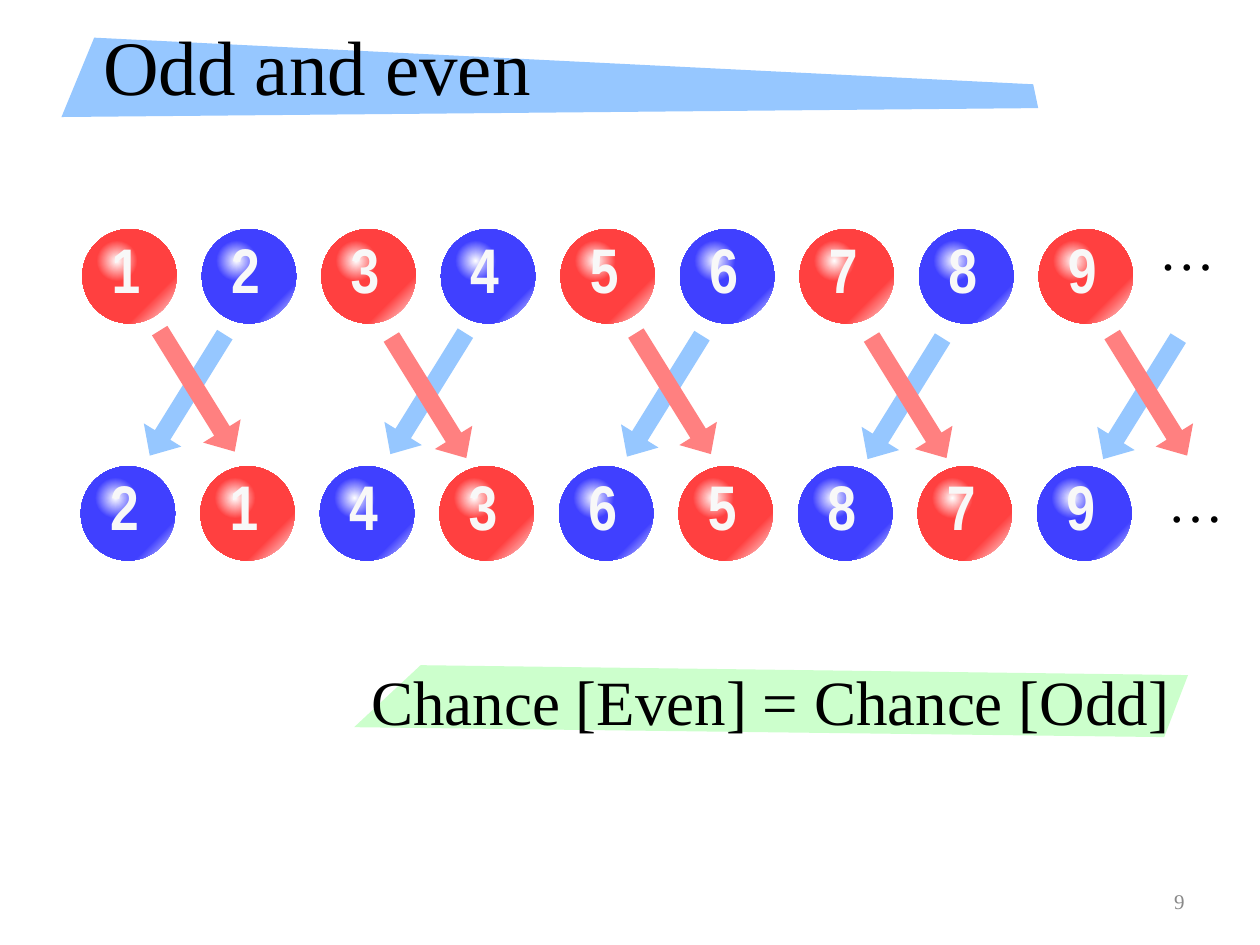
from pptx import Presentation
from pptx import util as u
from pptx.dml.color import RGBColor
from pptx.enum import shapes, text
from pptx.oxml import parse_xml
from pptx.oxml.ns import nsdecls

COLORS = {
    "red": "FF4040", "blue": "4040FF", "white": "FFFFFF", "digit": "F8F8F8",
    "red_arrow": "FF8080", "blue_arrow": "96C7FF", "title_band": "96C7FF",
    "answer_band": "CCFFCC", "ink": "000000", "page": "898989",
}
SERIF, NARROW = "Times New Roman", "Arial Narrow"

ROWS = [
    {"top": 4.62, "left": 1.66, "numbers": "123456789", "colors": ("red", "blue")},
    {"top": 9.4, "left": 1.63, "numbers": "214365879", "colors": ("blue", "red")},
]
LAST_LOWER = "9"
PITCH, BALL, SHINE = 2.41, 1.9, 0.92
SHINE_SHIFT = (0.24, 0.18)
DIGIT_SHIFT = (0.34, -0.1)
RIM_STOP = {"red": 74, "blue": 78}

ARROW_SIZE = (2.87, 0.89)
ARROWS = [
    ("blue_arrow", 121.8,
     [(2.34, 7.52), (7.19, 7.49), (11.96, 7.54), (16.81, 7.59), (21.56, 7.59)]),
    ("red_arrow", 58.2,
     [(2.54, 7.44), (7.21, 7.57), (12.14, 7.49), (16.89, 7.57), (21.74, 7.52)]),
]

BANDS = [
    ("title_band", [(1.9, 0.76), (20.83, 1.7), (20.93, 2.18), (1.24, 2.36)]),
    ("answer_band", [(8.48, 13.41), (23.95, 13.61), (23.47, 14.86), (7.14, 14.66)]),
]

LABELS = [
    ("Odd and even", (1.83, -0.08, 22.25, 2.79), 44, "ink", "middle", "left", True),
    ("Chance [Even] = Chance [Odd]", (7.24, 13.23, 16.76, 1.8), 36, "ink", "top", "left", False),
    ("…", (23.11, 4.19, 1.65, 1.63), 32, "ink", "top", "left", False),
    ("…", (23.29, 9.27, 1.65, 1.63), 32, "ink", "top", "left", False),
    ("9", (18.21, 17.65, 5.92, 1.02), 12, "page", "middle", "right", True),
]
ANCHORS = {"top": text.MSO_ANCHOR.TOP, "middle": text.MSO_ANCHOR.MIDDLE}
ALIGNS = {"left": text.PP_ALIGN.LEFT, "right": text.PP_ALIGN.RIGHT}


def cm(values):
    return [u.Cm(value) for value in values]


def bare(part):
    part.shadow.inherit = False
    part.line.fill.background()
    return part


def paint(part, color):
    part.fill.solid()
    part.fill.fore_color.rgb = RGBColor.from_string(COLORS[color])


def add_label(slide, words, box, size, color, anchor="top", align="left",
              wrap=True, font=SERIF):
    frame = slide.shapes.add_textbox(*cm(box)).text_frame
    frame.word_wrap = wrap
    frame.vertical_anchor = ANCHORS[anchor]
    paragraph = frame.paragraphs[0]
    paragraph.alignment = ALIGNS[align]
    run = paragraph.add_run()
    run.text = words
    run.font.size = u.Pt(size)
    run.font.name = font
    run.font.color.rgb = RGBColor.from_string(COLORS[color])
    return run


def add_disc(slide, left, top, size, stops, focus):
    disc = bare(slide.shapes.add_shape(shapes.MSO_SHAPE.OVAL, *cm((left, top, size, size))))
    stop_xml = "".join(
        f'<a:gs pos="{pos * 1000}"><a:srgbClr val="{COLORS[color]}"/></a:gs>'
        for pos, color in stops)
    edges = " ".join(f'{side}="{value * 1000}"' for side, value in zip("ltrb", focus))
    gradient = parse_xml(
        f'<a:gradFill {nsdecls("a")} rotWithShape="1"><a:gsLst>{stop_xml}</a:gsLst>'
        f'<a:path path="circle"><a:fillToRect {edges}/></a:path></a:gradFill>')
    disc._element.spPr.prstGeom.addnext(gradient)


def add_ball(slide, left, top, color, number):
    add_disc(slide, left, top, BALL,
             [(0, color), (RIM_STOP[color], color), (100, "white")], (0, 0, 100, 100))
    add_disc(slide, left + SHINE_SHIFT[0], top + SHINE_SHIFT[1], SHINE,
             [(0, "white"), (64, color), (100, color)], (50, 50, 50, 50))
    digit = add_label(slide, number,
                      (left + DIGIT_SHIFT[0], top + DIGIT_SHIFT[1], 1.4, 1.8),
                      36, "digit", font=NARROW)
    digit.font.bold = True
    digit._r.get_or_add_rPr().set("spc", "150")


def add_band(slide, color, corners):
    start, *rest = [tuple(cm(corner)) for corner in corners]
    outline = slide.shapes.build_freeform(*start)
    outline.add_line_segments(rest, close=True)
    paint(bare(outline.convert_to_shape()), color)


def add_arrow(slide, color, angle, place):
    arrow = bare(slide.shapes.add_shape(
        shapes.MSO_SHAPE.RIGHT_ARROW, *cm(place + ARROW_SIZE)))
    arrow.adjustments[0], arrow.adjustments[1] = 0.41, 0.55
    arrow.rotation = angle
    paint(arrow, color)


def main():
    deck = Presentation()
    deck.slide_width, deck.slide_height = cm((25.4, 19.05))
    slide = deck.slides.add_slide(deck.slide_layouts[6])

    for color, corners in BANDS:
        add_band(slide, color, corners)
    for label in LABELS:
        add_label(slide, *label)
    for row in ROWS:
        numbers = row["numbers"][:-1] + LAST_LOWER
        for index, number in enumerate(numbers):
            add_ball(slide, row["left"] + index * PITCH, row["top"],
                     row["colors"][index % 2], number)
    for color, angle, places in ARROWS:
        for place in places:
            add_arrow(slide, color, angle, place)

    deck.save("out.pptx")


if __name__ == "__main__":
    main()
